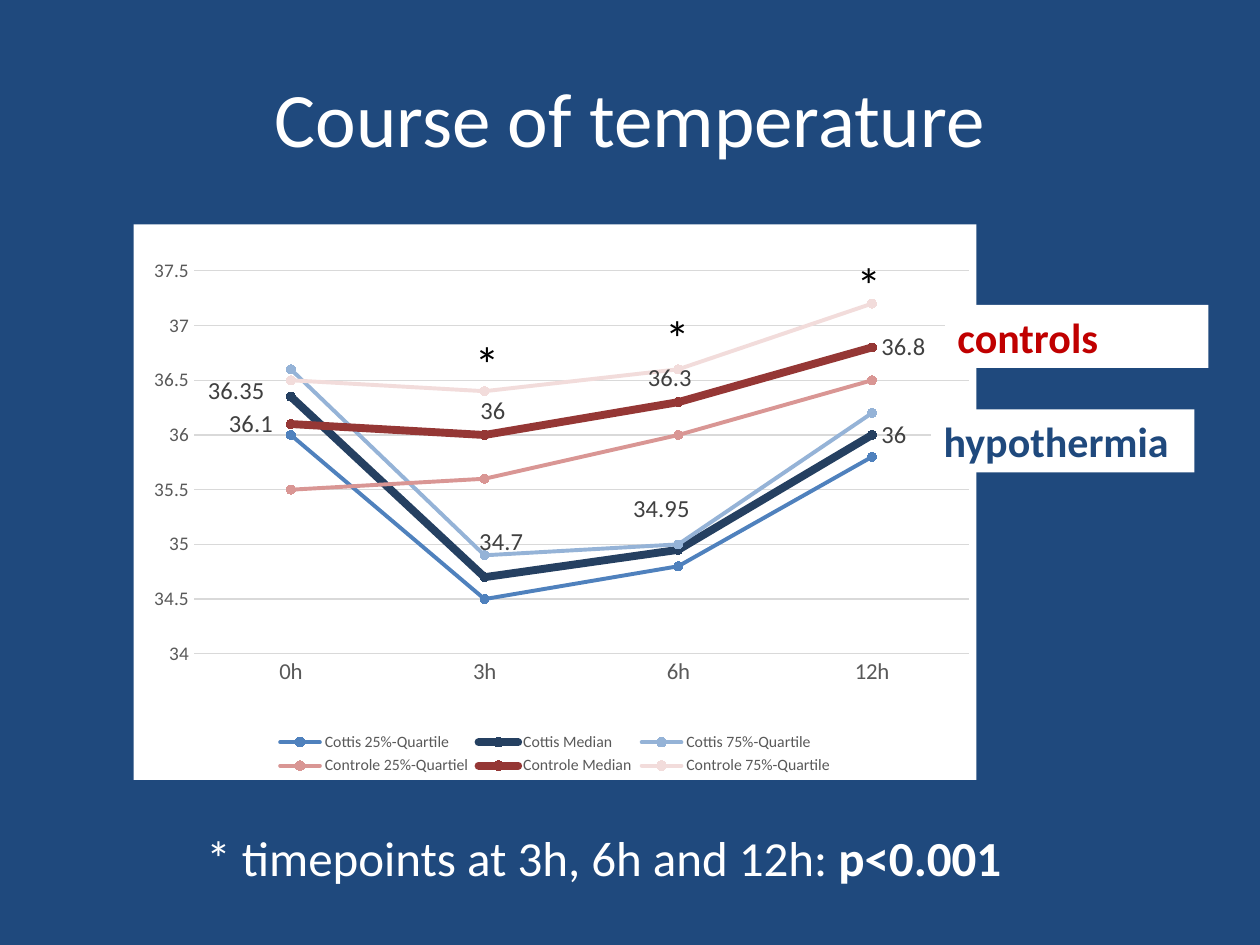
from dataclasses import dataclass

from lxml import etree
from pptx import Presentation
from pptx.chart.data import CategoryChartData
from pptx.chart.series import LineSeries
from pptx.dml.color import RGBColor
from pptx.enum.chart import XL_CHART_TYPE, XL_LABEL_POSITION, XL_LEGEND_POSITION
from pptx.enum.chart import XL_MARKER_STYLE, XL_TICK_MARK
from pptx.oxml import parse_xml
from pptx.slide import Slide
from pptx.text.text import Font
from pptx.util import Inches, Pt

LINE_MARKERS = XL_CHART_TYPE.LINE_MARKERS
CIRCLE = XL_MARKER_STYLE.CIRCLE
NO_TICK = XL_TICK_MARK.NONE
LEGEND_BOTTOM = XL_LEGEND_POSITION.BOTTOM
LEFT, ABOVE, RIGHT = XL_LABEL_POSITION.LEFT, XL_LABEL_POSITION.ABOVE, XL_LABEL_POSITION.RIGHT

CHART_NAMESPACE = "http://schemas.openxmlformats.org/drawingml/2006/chart"
DRAWING_NAMESPACE = "http://schemas.openxmlformats.org/drawingml/2006/main"
EXTENSION_NAMESPACE = "http://schemas.microsoft.com/office/drawing/2012/chart"
CHART = "{" + CHART_NAMESPACE + "}"
CHART_WIDTH, CHART_HEIGHT = 6.69, 4.41


@dataclass(frozen=True)
class Theme:
    font: str = "Calibri"
    navy: str = "1F497D"
    white: str = "FFFFFF"
    black: str = "000000"
    red: str = "C00000"
    axis_text: str = "595959"
    label_text: str = "404040"
    grid: str = "D9D9D9"
    title_size: int = 44
    note_size: int = 28
    group_size: int = 24
    label_size: int = 14
    category_size: int = 13
    value_size: int = 11
    chart_size: int = 10
    legend_size: int = 9
    thin_line: float = 2.25
    thick_line: float = 4.5
    grid_line: float = 0.75


THEME = Theme()


@dataclass(frozen=True)
class PointLabel:
    position: XL_LABEL_POSITION
    shift: tuple[float, float] = (0, 0)


@dataclass(frozen=True)
class Curve:
    name: str
    values: tuple[float, ...]
    color: str
    marker_color: str
    width: float = THEME.thin_line
    labels: tuple[PointLabel, ...] = ()


@dataclass(frozen=True)
class TextBox:
    text: str
    left: float
    top: float
    width: float
    height: float
    size: int
    color: str
    bold: bool = False
    fill: str = ""
    bold_ending: str = ""


TIMEPOINTS = ("0h", "3h", "6h", "12h")
HYPOTHERMIA_LABELS = (PointLabel(LEFT, (-0.02, -0.01)), PointLabel(ABOVE, (0.02, -0.02)),
                      PointLabel(ABOVE, (-0.02, -0.03)), PointLabel(RIGHT))
CONTROL_LABELS = (PointLabel(LEFT, (-0.01, 0)), PointLabel(ABOVE, (0.01, 0)),
                  PointLabel(ABOVE, (-0.01, 0)), PointLabel(RIGHT))
CURVES = (
    Curve("Cottis 25%-Quartile", (36, 34.5, 34.8, 35.8), "4F81BD", "4F81BD"),
    Curve("Cottis Median", (36.35, 34.7, 34.95, 36), "254061", "254061",
          THEME.thick_line, HYPOTHERMIA_LABELS),
    Curve("Cottis 75%-Quartile", (36.6, 34.9, 35, 36.2), "95B3D7", "B9CDE5"),
    Curve("Controle 25%-Quartiel", (35.5, 35.6, 36, 36.5), "D99694", "D99694"),
    Curve("Controle Median", (36.1, 36, 36.3, 36.8), "953735", "953735",
          THEME.thick_line, CONTROL_LABELS),
    Curve("Controle 75%-Quartile", (36.5, 36.4, 36.6, 37.2), "F2DCDB", "F2DCDB"),
)
NOTE = TextBox("* timepoints at 3h, 6h and 12h: ", 1.54, 6.52, 7.01, 0.57,
               THEME.note_size, THEME.white, bold_ending="p<0.001")
GROUPS = tuple(
    TextBox(name, left, top, 2.09, 0.5, THEME.group_size, color, True, THEME.white)
    for name, left, top, color in (("hypothermia", 7.39, 3.25, THEME.navy),
                                   ("controls", 7.5, 2.42, THEME.red)))
STARS = tuple(
    TextBox("*", left, top, 1.02, 0.57, THEME.note_size, THEME.black)
    for left, top in ((3.67, 2.6), (5.18, 2.39), (6.7, 1.97)))


def rgb(color: str) -> RGBColor:
    return RGBColor.from_string(color)


def format_font(font: Font, size: int, color: str, bold: bool = False) -> None:
    font.name, font.size, font.bold = THEME.font, Pt(size), bold
    font.color.rgb = rgb(color)


def manual_layout(**settings: str | float) -> etree.ElementBase:
    layout = parse_xml(f'<c:layout xmlns:c="{CHART_NAMESPACE}"/>')
    manual = etree.SubElement(layout, CHART + "manualLayout")
    for name, value in settings.items():
        etree.SubElement(manual, CHART + name).set("val", str(value))
    return layout


def add_text_box(slide: Slide, box: TextBox) -> None:
    shape = slide.shapes.add_textbox(
        Inches(box.left), Inches(box.top), Inches(box.width), Inches(box.height))
    if box.fill:
        shape.fill.solid()
        shape.fill.fore_color.rgb = rgb(box.fill)
    shape.text_frame.word_wrap = True
    paragraph = shape.text_frame.paragraphs[0]
    paragraph.text = box.text
    format_font(paragraph.runs[0].font, box.size, box.color, box.bold)
    if box.bold_ending:
        ending = paragraph.add_run()
        ending.text = box.bold_ending
        format_font(ending.font, box.size, box.color, bold=True)


def hide_leader_lines(labels: etree.ElementBase) -> None:
    for element in labels.findall(CHART + "showLeaderLines"):
        element.set("val", "0")
    labels.append(parse_xml(
        f'<c:extLst xmlns:c="{CHART_NAMESPACE}" xmlns:c15="{EXTENSION_NAMESPACE}">'
        '<c:ext uri="{CE6537A1-D6FC-4f65-9D91-7224C49458BB}">'
        '<c15:showLeaderLines val="0"/></c:ext></c:extLst>'))


def format_curve(series: LineSeries, curve: Curve) -> None:
    series.smooth = False
    series.format.line.color.rgb = rgb(curve.color)
    series.format.line.width = Pt(curve.width)
    series._element.find(f"{CHART}spPr/{{{DRAWING_NAMESPACE}}}ln").set("cap", "rnd")
    marker = series.marker
    marker.style, marker.size = CIRCLE, 5
    marker.format.fill.solid()
    marker.format.fill.fore_color.rgb = rgb(curve.marker_color)
    marker.format.line.color.rgb = rgb(curve.marker_color)
    for index, label in enumerate(curve.labels):
        data_label = series.points[index].data_label
        format_font(data_label.font, THEME.label_size, THEME.label_text)
        data_label.position = label.position
    for element, label in zip(series._element.iter(CHART + "dLbl"), curve.labels):
        if any(label.shift):
            element.insert(1, manual_layout(x=label.shift[0], y=label.shift[1]))
    for labels in series._element.findall(CHART + "dLbls"):
        hide_leader_lines(labels)


def add_temperature_chart(slide: Slide) -> None:
    data = CategoryChartData()
    data.categories = TIMEPOINTS
    for curve in CURVES:
        data.add_series(curve.name, curve.values)
    chart = slide.shapes.add_chart(LINE_MARKERS, Inches(1.06), Inches(1.78),
                                   Inches(CHART_WIDTH), Inches(CHART_HEIGHT), data).chart
    chart.has_title = False
    format_font(chart.font, THEME.chart_size, THEME.black)
    chart.plots[0].vary_by_categories = False
    category_axis, value_axis = chart.category_axis, chart.value_axis
    for axis, size in ((category_axis, THEME.category_size), (value_axis, THEME.value_size)):
        axis.major_tick_mark = axis.minor_tick_mark = NO_TICK
        format_font(axis.tick_labels.font, size, THEME.axis_text)
    value_axis.minimum_scale, value_axis.maximum_scale, value_axis.major_unit = 34, 37.5, 0.5
    value_axis.format.line.fill.background()
    for line in (category_axis.format.line, value_axis.major_gridlines.format.line):
        line.color.rgb, line.width = rgb(THEME.grid), Pt(THEME.grid_line)
    chart.has_legend = True
    chart.legend.position, chart.legend.include_in_layout = LEGEND_BOTTOM, False
    format_font(chart.legend.font, THEME.legend_size, THEME.axis_text)
    for series, curve in zip(chart.plots[0].series, CURVES):
        format_curve(series, curve)
    chart_element = chart._chartSpace.find(CHART + "chart")
    plot_area = chart_element.find(CHART + "plotArea")
    for layout in plot_area.findall(CHART + "layout"):
        plot_area.remove(layout)
    plot_area.insert(0, manual_layout(
        layoutTarget="inner", xMode="edge", yMode="edge", x=0.48 / CHART_WIDTH,
        y=0.37 / CHART_HEIGHT, w=6.15 / CHART_WIDTH, h=3.04 / CHART_HEIGHT))
    chart_element.addnext(parse_xml(
        f'<c:spPr xmlns:c="{CHART_NAMESPACE}" xmlns:a="{DRAWING_NAMESPACE}"><a:solidFill>'
        f'<a:srgbClr val="{THEME.white}"/></a:solidFill><a:ln><a:noFill/></a:ln></c:spPr>'))


def main() -> None:
    presentation = Presentation()
    presentation.slide_width, presentation.slide_height = Inches(10), Inches(7.5)
    slide = presentation.slides.add_slide(presentation.slide_layouts[5])
    slide.background.fill.solid()
    slide.background.fill.fore_color.rgb = rgb(THEME.navy)
    title = slide.shapes.title
    title.left, title.top, title.width, title.height = map(Inches, (0.5, 0.3, 9, 1.25))
    title.text_frame.text = "Course of temperature"
    format_font(title.text_frame.paragraphs[0].runs[0].font, THEME.title_size, THEME.white)
    add_text_box(slide, NOTE)
    add_temperature_chart(slide)
    for box in GROUPS + STARS:
        add_text_box(slide, box)
    presentation.save("out.pptx")


if __name__ == "__main__":
    main()
